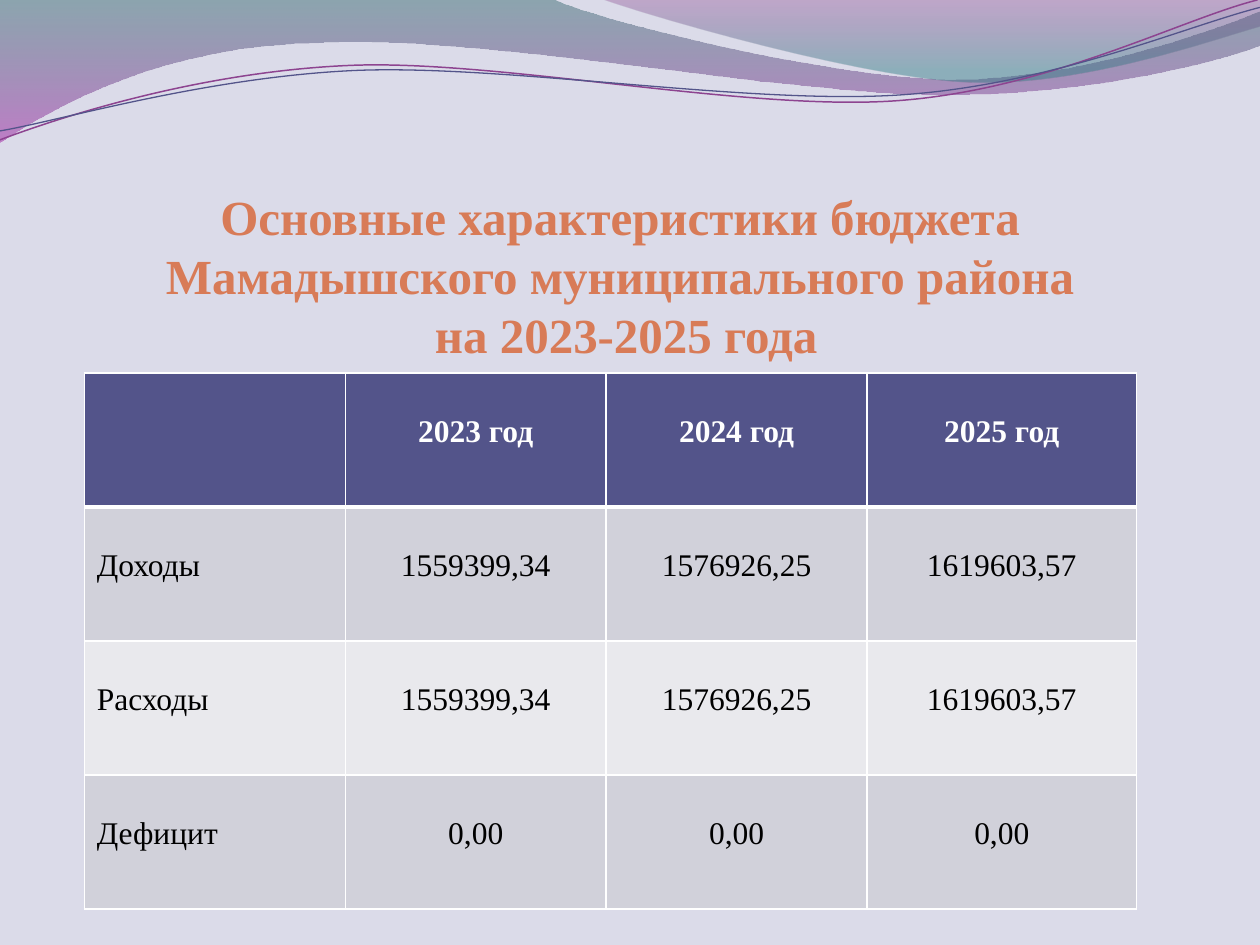
from lxml import etree
from pptx import Presentation
from pptx.dml.color import RGBColor
from pptx.enum.text import MSO_ANCHOR, PP_ALIGN
from pptx.oxml.ns import qn
from pptx.util import Cm, Pt

LEFT, CENTER = PP_ALIGN.LEFT, PP_ALIGN.CENTER
BOTTOM = MSO_ANCHOR.BOTTOM
FONT = "Times New Roman"
C = {
    "bg": "DBDBE9", "title": "D87B57", "head": "53548A", "odd": "D1D1DA",
    "even": "E9E9ED", "white": "FFFFFF", "black": "000000", "plum": "8D4490",
    "teal": "2D6368", "violet": "A530A9", "purple": "7F2F82", "sea": "2F7B82",
}
RGB = {name: RGBColor.from_string(value) for name, value in C.items()}

prs = Presentation()
prs.slide_width, prs.slide_height = Cm(25.4), Cm(19.05)
s = prs.slides.add_slide(prs.slide_layouts[6])
s.background.fill.solid()
s.background.fill.fore_color.rgb = RGB["bg"]


def write(tf, text, size=18, color="black", bold=False, align=LEFT):
    p = tf.paragraphs[0]
    p.alignment = align
    for i, line in enumerate(text.split("\n")):
        if i:
            p.add_line_break()
        r = p.add_run()
        r.text = line
        r.font.name, r.font.size, r.font.bold = FONT, Pt(size), bold
        r.font.color.rgb = RGB[color]


def add_path(start, segments, close):
    """Draw straight (x, y) and cubic (x1, y1, x2, y2, x, y) segments, in cm."""
    points = [(Cm(seg[i]), Cm(seg[i + 1])) for seg in segments
              for i in range(0, len(seg), 2)]
    fb = s.shapes.build_freeform(Cm(start[0]), Cm(start[1]))
    fb.add_line_segments(points, close=close)
    sp = fb.convert_to_shape()
    sp.shadow.inherit = False
    # Join the three points of each cubic segment into one curve
    steps = iter(list(sp._element.iter(qn("a:lnTo"))))
    for seg in segments:
        first = next(steps)
        if len(seg) == 6:
            first.tag = qn("a:cubicBezTo")
            for _ in range(2):
                extra = next(steps)
                first.append(extra[0])
                extra.getparent().remove(extra)
    return sp


# Gradient waves: start, segments, (colour, position, opacity) of each stop
waves = [
    ((0, 0), [(11.18, 0), (12.09, 0.43, 16.87, 1.6, 19.25, 1.6),
              (21.67, 1.6, 24.33, 0.66, 25.4, 0.23), (25.4, 0.91),
              (24.97, 1.12, 22.1, 1.93, 18.95, 1.91),
              (15.8, 1.91, 9.7, 0.71, 6.53, 0.86),
              (3.28, 0.91, 1.17, 2.11, 0, 2.87)],
     [("teal", 0, 45), ("violet", 1, 55)]),
    ((12.17, 0), [(12.93, 0.28, 17.32, 1.57, 19.53, 1.65),
                  (21.74, 1.75, 24.41, 0.81, 25.4, 0.53), (25.4, 0)],
     [("purple", 0, 30), ("sea", 0.8, 45)]),
]
for start, segments, stops in waves:
    sp = add_path(start, segments, True)
    sp.line.fill.background()
    sp.fill.gradient()
    sp.fill.gradient_angle = 270
    for stop, (color, position, _) in zip(sp.fill.gradient_stops, stops):
        stop.color.rgb, stop.position = RGB[color], position
    for clr, (_, _, opacity) in zip(sp._element.spPr.iter(qn("a:srgbClr")), stops):
        etree.SubElement(clr, qn("a:alpha"), val=str(opacity * 1000))

# Thin wavy lines
threads = [
    ((0, 2.82), [(1.22, 2.36, 4.01, 1.45, 7.04, 1.32),
                 (10.03, 1.19, 15.06, 2.26, 18.11, 2.03),
                 (21.16, 1.8, 23.83, 0.38, 25.35, 0)], "plum", 0.85),
    ((0, 2.64), [(1.19, 2.44, 4.17, 1.55, 7.19, 1.42),
                 (10.24, 1.3, 15.16, 2.13, 18.21, 1.91),
                 (21.23, 1.7, 23.9, 0.53, 25.4, 0.15)], "head", 0.75),
]
for start, segments, color, width in threads:
    sp = add_path(start, segments, False)
    sp.fill.background()
    sp.line.color.rgb, sp.line.width = RGB[color], Pt(width)

# Title
tf = s.shapes.add_textbox(Cm(1.9), Cm(1.52), Cm(21.2), Cm(5.8)).text_frame
tf.word_wrap, tf.vertical_anchor = True, BOTTOM
tf.margin_left = tf.margin_right = tf.margin_top = tf.margin_bottom = 0
write(tf, "Основные характеристики бюджета Мамадышского муниципального района\n"
          " на 2023-2025 года",
      size=28, color="title", bold=True, align=CENTER)

# Budget table
rows = [
    ["", "2023 год", "2024 год", "2025 год"],
    ["Доходы", "1559399,34", "1576926,25", "1619603,57"],
    ["Расходы", "1559399,34", "1576926,25", "1619603,57"],
    ["Дефицит", "0,00", "0,00", "0,00"],
]
fills = ["head", "odd", "even", "odd"]
widths = [5.26, 5.26, 5.26, 5.43]
table = s.shapes.add_table(len(rows), len(widths), Cm(1.7), Cm(7.52),
                           Cm(sum(widths)), Cm(10.8)).table
for col, width in zip(table.columns, widths):
    col.width = Cm(width)
for i, values in enumerate(rows):
    table.rows[i].height = Cm(2.7)
    edges = {"lnL": 1, "lnR": 1, "lnT": 3 if i == 1 else 1, "lnB": 3 if i == 0 else 1}
    for j, value in enumerate(values):
        cell = table.cell(i, j)
        cell.margin_top = Cm(0.84)
        if value:
            write(cell.text_frame, value, color="black" if i else "white",
                  bold=i == 0, align=CENTER if j else LEFT)
        tcPr = cell._tc.get_or_add_tcPr()
        for tag, width in edges.items():
            ln = etree.SubElement(tcPr, qn("a:" + tag), w=str(Pt(width)))
            solid = etree.SubElement(ln, qn("a:solidFill"))
            etree.SubElement(solid, qn("a:srgbClr"), val=C["white"])
        cell.fill.solid()
        cell.fill.fore_color.rgb = RGB[fills[i]]

prs.save("out.pptx")
